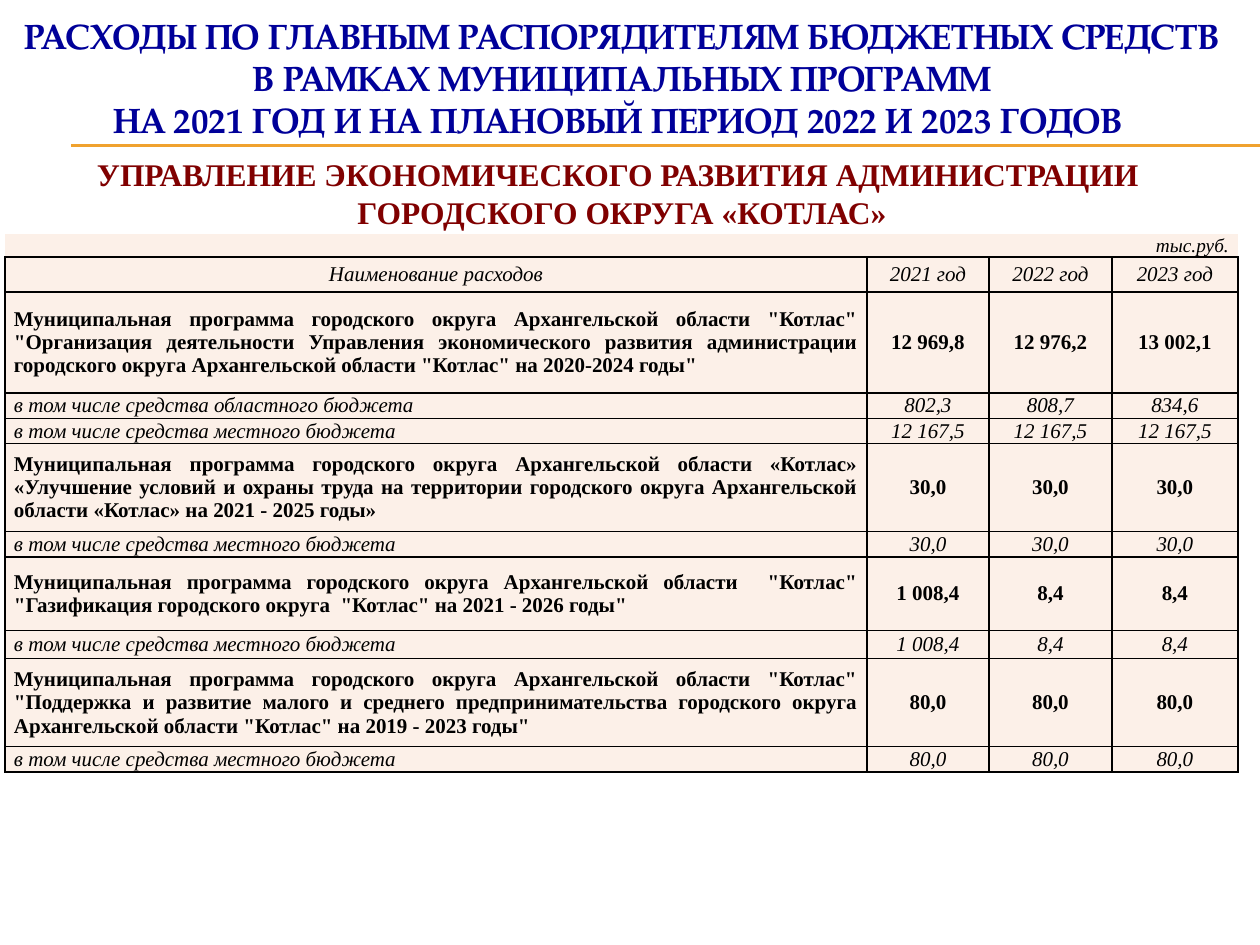
from lxml import etree
from pptx import Presentation
from pptx import util as u
from pptx.dml.color import RGBColor
from pptx.enum import shapes, text
from pptx.oxml.ns import qn

PX = 914400 // 126
THEME = {
    "title": "000099", "subtitle": "800000", "rule": "F0A22E",
    "ink": "000000", "cell": "FCF0E8",
    "title_font": "TeX Gyre Pagella", "body_font": "Times New Roman",
    "title_pt": 20, "subtitle_pt": 18, "unit_pt": 11, "cell_pt": 12,
}
AL = text.PP_ALIGN


def add_run(p, words, font, size, color, bold=False, italic=False):
    r = p.add_run()
    r.text = words
    r.font.name, r.font.size = font, u.Pt(size)
    r.font.bold, r.font.italic = bold, italic
    r.font.color.rgb = RGBColor.from_string(color)


def add_border(cell, side, visible):
    ln = etree.SubElement(cell._tc.get_or_add_tcPr(), qn(f"a:ln{side}"), w=str(u.Pt(1)))
    if visible:
        fill = etree.SubElement(ln, qn("a:solidFill"))
        etree.SubElement(fill, qn("a:srgbClr"), val=THEME["ink"])
    else:
        etree.SubElement(ln, qn("a:noFill"))


prs = Presentation()
prs.slide_width, prs.slide_height = 1260 * PX, 945 * PX
s = prs.slides.add_slide(prs.slide_layouts[6])

# Double rule under the title
for y in (145, 146):
    line = s.shapes.add_connector(shapes.MSO_CONNECTOR.STRAIGHT, 71 * PX, y * PX, 1260 * PX, y * PX)
    line.line.color.rgb = RGBColor.from_string(THEME["rule"])
    line.line.width = u.Pt(0.75)
    etree.SubElement(line._element.spPr, qn("a:effectLst"))

# Title and department name
sp = s.shapes.add_textbox(5 * PX, 15 * PX, 1234 * PX, 216 * PX)
tf = sp.text_frame
tf.word_wrap = True
tf.margin_left = tf.margin_right = tf.margin_top = tf.margin_bottom = 0
title = ("title", 24, True)
subtitle = ("subtitle", 21.6, False)
headings = [
    ("РАСХОДЫ ПО ГЛАВНЫМ РАСПОРЯДИТЕЛЯМ БЮДЖЕТНЫХ СРЕДСТВ", title),
    ("В РАМКАХ МУНИЦИПАЛЬНЫХ ПРОГРАММ", title),
    ("НА 2021 ГОД И НА ПЛАНОВЫЙ ПЕРИОД 2022 И 2023 ГОДОВ ", title),
    ("УПРАВЛЕНИЕ ЭКОНОМИЧЕСКОГО РАЗВИТИЯ АДМИНИСТРАЦИИ ", subtitle),
    ("ГОРОДСКОГО ОКРУГА «КОТЛАС»", subtitle),
]
for i, (words, (role, pitch, is_title)) in enumerate(headings):
    p = tf.paragraphs[0] if i == 0 else tf.add_paragraph()
    p.alignment, p.line_spacing = AL.CENTER, u.Pt(pitch)
    p.space_before = u.Pt(8 if i == 3 else 0)
    font = THEME["title_font" if is_title else "body_font"]
    add_run(p, words, font, THEME[role + "_pt"], THEME[role], bold=True)

# Expenditure table: row height in px, then the four cells
LOCAL = "в том числе средства местного бюджета"
rows = [
    (23, "", "", "", "тыс.руб."),
    (35, "Наименование расходов", "2021 год", "2022 год", "2023 год"),
    (101, 'Муниципальная программа городского округа Архангельской области "Котлас" '
          '"Организация деятельности Управления экономического развития администрации '
          'городского округа Архангельской области "Котлас" на 2020-2024 годы"',
     "12 969,8", "12 976,2", "13 002,1"),
    (24, "в том числе средства областного бюджета", "802,3", "808,7", "834,6"),
    (24, LOCAL, "12 167,5", "12 167,5", "12 167,5"),
    (88, "Муниципальная программа городского округа Архангельской области «Котлас» "
         "«Улучшение условий и охраны труда на территории городского округа Архангельской "
         "области «Котлас» на 2021 - 2025 годы»", "30,0", "30,0", "30,0"),
    (24, LOCAL, "30,0", "30,0", "30,0"),
    (74, 'Муниципальная программа городского округа Архангельской области  "Котлас" '
         '"Газификация городского округа  "Котлас" на 2021 - 2026 годы"',
     "1 008,4", "8,4", "8,4"),
    (28, LOCAL, "1 008,4", "8,4", "8,4"),
    (88, 'Муниципальная программа городского округа Архангельской области "Котлас" '
         '"Поддержка и развитие малого и среднего предпринимательства городского округа '
         'Архангельской области "Котлас" на 2019 - 2023 годы"', "80,0", "80,0", "80,0"),
    (24, LOCAL, "80,0", "80,0", "80,0"),
]
cols = [862, 122, 123, 126]
height = sum(row[0] for row in rows)
table = s.shapes.add_table(len(rows), len(cols), 5 * PX, 234 * PX, sum(cols) * PX, height * PX).table
table.first_row = table.horz_banding = False
for column, width in zip(table.columns, cols):
    column.width = width * PX

for i, (row_height, *cells) in enumerate(rows):
    table.rows[i].height = row_height * PX
    is_program = cells[0].startswith("Муниципальная")
    size = THEME["unit_pt" if i == 0 else "cell_pt"]
    for j, words in enumerate(cells):
        cell = table.cell(i, j)
        cell.margin_left = cell.margin_right = 9 * PX
        cell.margin_top = cell.margin_bottom = 0
        cell.vertical_anchor = text.MSO_ANCHOR.MIDDLE
        for side in "LRTB":
            add_border(cell, side, i > 0 or side == "B")
        cell.fill.solid()
        cell.fill.fore_color.rgb = RGBColor.from_string(THEME["cell"])
        p = cell.text_frame.paragraphs[0]
        if i == 0:
            p.alignment = AL.RIGHT
        else:
            p.alignment = AL.JUSTIFY if j == 0 and i > 1 else AL.CENTER
        if words:
            add_run(p, words, THEME["body_font"], size, THEME["ink"], is_program, not is_program)
        else:
            etree.SubElement(p._p, qn("a:endParaRPr"), sz=str(size * 100))

prs.save("out.pptx")
